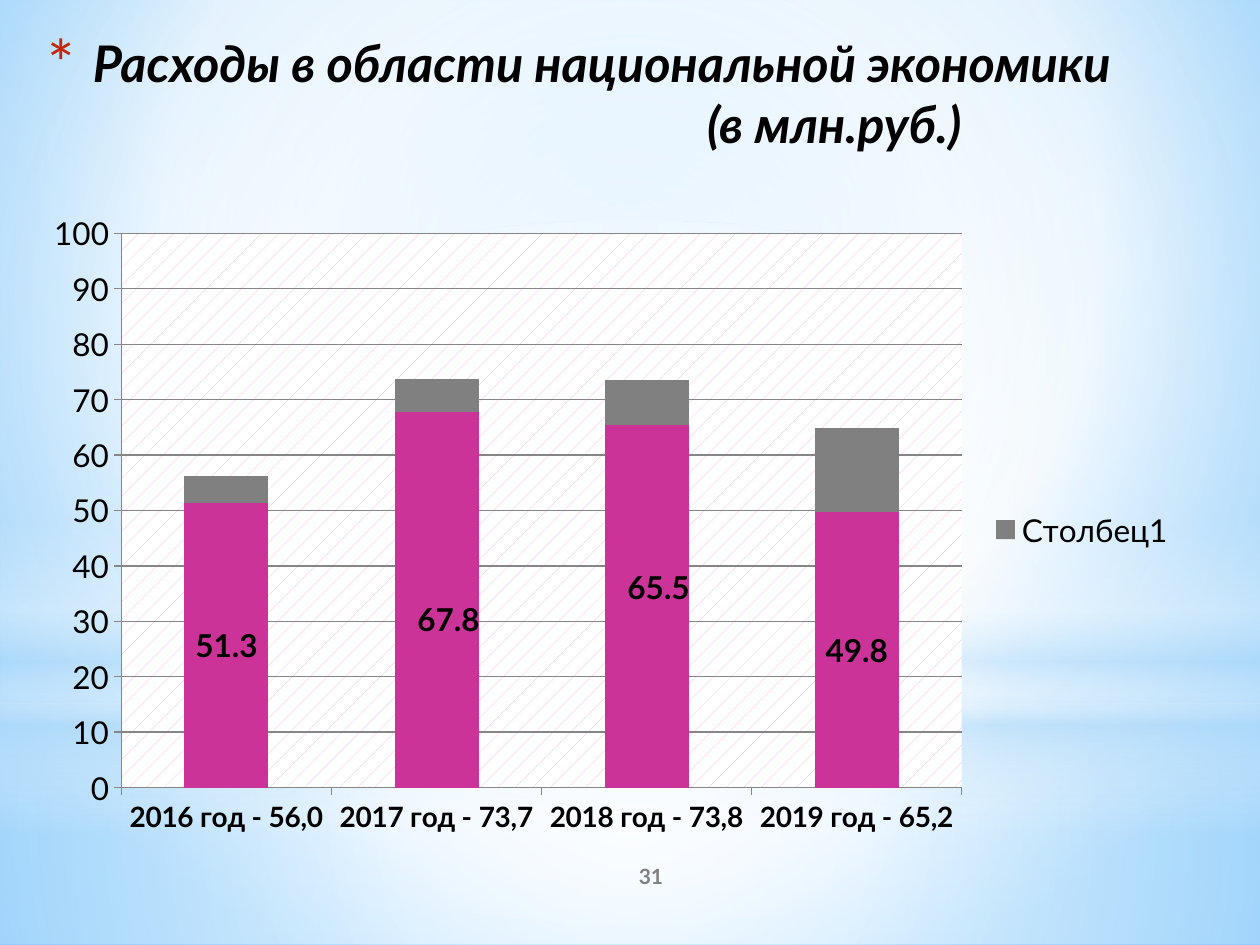
"""Build a slide with a stacked column chart of spending on the national economy."""
from pptx import Presentation
from pptx.chart.data import CategoryChartData
from pptx.dml.color import RGBColor as Color
from pptx.enum.chart import XL_CHART_TYPE as ChartType, XL_LEGEND_POSITION as LegendPlace
from pptx.enum.chart import XL_TICK_MARK as Tick
from pptx.enum.shapes import MSO_SHAPE as Preset
from pptx.enum.text import MSO_ANCHOR as Anchor, PP_ALIGN as Align
from pptx.oxml import parse_xml
from pptx.oxml.ns import nsdecls, qn
from pptx.util import Pt

THEME = {
    "font": "Lato", "ink": "000000", "muted": "808080", "bullet": "C3260C", "grid": "868686",
    "title": 28.8, "number": 12, "chart": 18, "category": 16,
    "pattern": ("EAB0E2", "FFFFFF"),
}
TITLE = ["Расходы в области национальной экономики", "(в млн.руб.)"]
PAGE_NUMBER = "31"
YEARS = ["2016 год - 56,0", "2017 год - 73,7", "2018 год - 73,8", "2019 год - 65,2"]
SERIES = [
    ("Series 1", [51.3, 67.8, 65.5, 49.8], "CC3399"),
    ("Столбец1", [5, 6, 8, 15], "808080"),
]
LABEL_SHIFTS = {1: {"x": 0.01, "y": 0.03}, 2: {"x": 0.01, "y": -0.03}}
PLOT_AREA = {"x": 0.08, "y": 0.03, "w": 0.7, "h": 0.88}
LEGEND_AREA = {"x": 0.8, "y": 0.46}

CENTRE = (50, 50, 50, 50)
BACKDROP = ([(0, "9ED5FF", 100), (60, "FFFFFF", 100), (100, "5BB9FF", 100)], (20, 10, 20, 60))
GLOWS = [
    (Preset.RECTANGLE, (0, 402, 720, 138),
     [(0, "FFFFFF", 91), (37, "FFFFFF", 76), (100, "B4DCFA", 79)], CENTRE),
    (Preset.RECTANGLE, (0, 0, 720, 402),
     [(0, "FFFFFF", 89), (48, "FFFFFF", 62), (100, "B4DCFA", 79)], CENTRE),
    (Preset.RECTANGLE, (0, 297, 720, 180),
     [(0, "FFFFFF", 0), (29, "FFFFFF", 30), (45, "B4DCFA", 40),
      (55, "FFFFFF", 26), (65, "B4DCFA", 60), (100, "FFFFFF", 0)], None),
    (Preset.OVAL, (0, 126, 720, 402), [(0, "FFFFFF", 100), (56, "FFFFFF", 0)], CENTRE),
]


def place(*lengths):
    return [Pt(length) for length in lengths]


def set_gradient(holder, stops, focus):
    marks = "".join(
        f'<a:gs pos="{spot * 1000}"><a:srgbClr val="{color}">'
        f'<a:alpha val="{alpha * 1000}"/></a:srgbClr></a:gs>' for spot, color, alpha in stops)
    direction = '<a:lin ang="5400000" scaled="0"/>'
    if focus:
        edges = " ".join(f'{side}="{part * 1000}"' for side, part in zip("ltrb", focus))
        direction = f'<a:path path="circle"><a:fillToRect {edges}/></a:path>'
    gradient = parse_xml(f'<a:gradFill {nsdecls("a")} rotWithShape="1">'
                         f'<a:gsLst>{marks}</a:gsLst>{direction}</a:gradFill>')
    holder.replace(holder.find(qn("a:solidFill")), gradient)


def style(font, size, color=THEME["ink"], bold=False, italic=False):
    font.name, font.size, font.bold, font.italic = THEME["font"], Pt(size), bold, italic
    font.color.rgb = Color.from_string(color)


def write(para, text, align=Align.LEFT, **look):
    para.alignment = align
    span = para.add_run()
    span.text = text
    style(span.font, **look)


def indent(para, left, hanging=0, bullet=None):
    props = para._p.get_or_add_pPr()
    props.set("marL", str(Pt(left)))
    props.set("indent", str(-Pt(hanging)))
    if bullet:
        for tag in (f'<a:buClr {nsdecls("a")}><a:srgbClr val="{THEME["bullet"]}"/></a:buClr>',
                    f'<a:buSzPct {nsdecls("a")} val="128000"/>',
                    f'<a:buFont {nsdecls("a")} typeface="{THEME["font"]}"/>',
                    f'<a:buChar {nsdecls("a")} char="{bullet}"/>'):
            props.append(parse_xml(tag))


def manual_layout(parts, target="", edge=False):
    target = f'<c:layoutTarget val="{target}"/>' if target else ""
    modes = '<c:xMode val="edge"/><c:yMode val="edge"/>' if edge else ""
    values = "".join(f'<c:{key} val="{value}"/>' for key, value in parts.items())
    return parse_xml(f'<c:layout {nsdecls("c")}><c:manualLayout>{target}{modes}{values}'
                     '</c:manualLayout></c:layout>')


def add_backdrop(page):
    page.background.fill.solid()
    set_gradient(page.element.find(".//" + qn("p:bgPr")), *BACKDROP)
    for preset, area, stops, focus in GLOWS:
        glow = page.shapes.add_shape(preset, *place(*area))
        glow.shadow.inherit = False
        glow.line.fill.background()
        glow.fill.solid()
        set_gradient(glow.element.spPr, stops, focus)


def add_texts(page):
    frame = page.shapes.add_textbox(*place(300, 486, 144, 29)).text_frame
    frame.word_wrap, frame.vertical_anchor = True, Anchor.MIDDLE
    write(frame.paragraphs[0], PAGE_NUMBER, align=Align.CENTER,
          size=THEME["number"], color=THEME["muted"], bold=True)
    frame = page.shapes.add_textbox(*place(20, 15, 680, 96.5)).text_frame
    frame.word_wrap = True
    heading, unit = frame.paragraphs[0], frame.add_paragraph()
    indent(heading, 26, hanging=26, bullet="*")
    indent(unit, 377)
    for para, text in zip((heading, unit), TITLE):
        write(para, text, size=THEME["title"], bold=True, italic=True)


def style_axes(chart):
    values, years = chart.value_axis, chart.category_axis
    values.minimum_scale, values.maximum_scale, values.major_unit = 0, 100, 10
    values.has_major_gridlines = True
    for axis in (values, years):
        axis.major_tick_mark, axis.minor_tick_mark = Tick.OUTSIDE, Tick.NONE
    for line in (values.format.line, years.format.line, values.major_gridlines.format.line):
        line.color.rgb = Color.from_string(THEME["grid"])
        line.width = Pt(0.75)
    style(values.tick_labels.font, THEME["chart"])
    style(years.tick_labels.font, THEME["category"], bold=True)


def add_spending_chart(page):
    data = CategoryChartData(number_format="General")
    data.categories = YEARS
    for name, numbers, _ in SERIES:
        data.add_series(name, numbers)
    chart = page.shapes.add_chart(
        ChartType.COLUMN_STACKED, *place(14.5, 122.5, 686, 360), data).chart
    chart.has_title = False
    style(chart.font, THEME["chart"])
    plot = chart.plots[0]
    plot.gap_width, plot.overlap, plot.vary_by_categories = 150, 100, False
    for series, (_, _, color) in zip(plot.series, SERIES):
        series.format.fill.solid()
        series.format.fill.fore_color.rgb = Color.from_string(color)
    style_axes(chart)

    main_series = plot.series[0]
    main_series.data_labels.show_value = True
    style(main_series.data_labels.font, THEME["chart"], bold=True)
    for index in LABEL_SHIFTS:
        style(main_series.points[index].data_label.font, THEME["chart"], bold=True)
    for label, shift in zip(chart.element.iter(qn("c:dLbl")), LABEL_SHIFTS.values()):
        label.insert(1, manual_layout(shift))

    chart.has_legend = True
    chart.legend.position, chart.legend.include_in_layout = LegendPlace.RIGHT, False
    style(chart.legend.font, THEME["chart"])
    legend = chart.element.find(".//" + qn("c:legend"))
    for layout in legend.findall(qn("c:layout")):
        legend.remove(layout)
    entry = parse_xml(
        f'<c:legendEntry {nsdecls("c")}><c:idx val="0"/><c:delete val="1"/></c:legendEntry>')
    legend.find(qn("c:legendPos")).addnext(entry)
    entry.addnext(manual_layout(LEGEND_AREA, edge=True))

    area = chart.element.find(".//" + qn("c:plotArea"))
    for layout in area.findall(qn("c:layout")):
        area.remove(layout)
    area.insert(0, manual_layout(PLOT_AREA, target="inner", edge=True))
    front, back = THEME["pattern"]
    area.append(parse_xml(
        f'<c:spPr {nsdecls("c", "a")}><a:pattFill prst="pct5">'
        f'<a:fgClr><a:srgbClr val="{front}"/></a:fgClr>'
        f'<a:bgClr><a:srgbClr val="{back}"/></a:bgClr></a:pattFill></c:spPr>'))


def main():
    deck = Presentation()
    deck.slide_width, deck.slide_height = place(720, 540)
    page = deck.slides.add_slide(deck.slide_layouts[6])
    add_backdrop(page)
    add_texts(page)
    add_spending_chart(page)
    deck.save("out.pptx")


if __name__ == "__main__":
    main()
